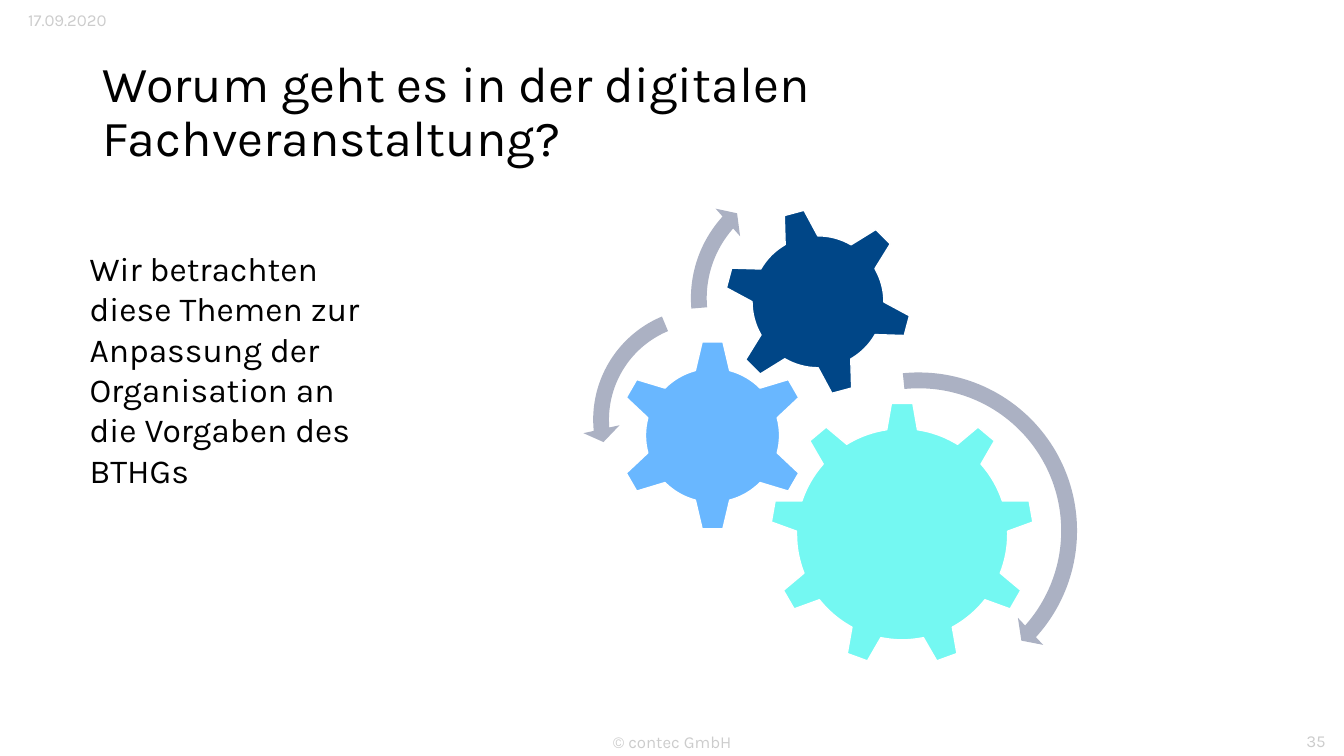
from dataclasses import dataclass

from pptx import Presentation
from pptx.dml.color import RGBColor
from pptx.enum.shapes import MSO_SHAPE as Shape
from pptx.enum.text import MSO_ANCHOR as Anchor, MSO_AUTO_SIZE as AutoSize, PP_ALIGN as Align
from pptx.util import Pt


@dataclass(frozen=True)
class Theme:
    font: str = "Karla"
    title_size: int = 36
    body_size: int = 24
    footer_size: int = 12
    ink: str = "000000"
    muted: str = "CCCCCC"
    outline: str = "FFFFFF"
    turquoise: str = "74F8F2"
    sky: str = "69B7FF"
    navy: str = "004687"
    arrow: str = "ABB1C3"


class SlideBuilder:
    def __init__(self, slide, theme):
        self.slide = slide
        self.theme = theme
        self.wheelwork = slide.shapes.add_group_shape()

    def set_text(self, frame, text, size, color, align, anchor):
        frame.word_wrap = True
        frame.vertical_anchor = anchor
        paragraph = frame.paragraphs[0]
        paragraph.text = text
        paragraph.alignment = align
        paragraph.font.name = self.theme.font
        paragraph.font.size = Pt(size)
        paragraph.font.color.rgb = RGBColor.from_string(color)
        return paragraph

    def title(self, text, left, top, width, height):
        heading = self.slide.shapes.title
        heading.left, heading.top = Pt(left), Pt(top)
        heading.width, heading.height = Pt(width), Pt(height)
        heading.text_frame.auto_size = AutoSize.NONE
        paragraph = self.set_text(heading.text_frame, text, self.theme.title_size,
                                  self.theme.ink, Align.LEFT, Anchor.MIDDLE)
        paragraph.line_spacing = 0.9

    def text(self, text, box, size, color, align=Align.LEFT, anchor=Anchor.TOP):
        frame = self.slide.shapes.add_textbox(*map(Pt, box)).text_frame
        self.set_text(frame, text, size, color, align, anchor)

    def round_shape(self, kind, left, top, diameter, color):
        """Add a filled preset with a square frame to the wheelwork group."""
        shape = self.wheelwork.shapes.add_shape(
            kind, Pt(left), Pt(top), Pt(diameter), Pt(diameter))
        shape.shadow.inherit = False
        shape.fill.solid()
        shape.fill.fore_color.rgb = RGBColor.from_string(color)
        return shape

    def gear(self, kind, left, top, diameter, color, rotation=0):
        gear = self.round_shape(kind, left, top, diameter, color)
        gear.rotation = rotation
        gear.line.color.rgb = RGBColor.from_string(self.theme.outline)
        gear.line.width = Pt(1)

    def turn_arrow(self, kind, left, top, diameter, band, angles, head):
        """Add a curved arrow; band and head in percent, angles in degrees."""
        arrow = self.round_shape(kind, left, top, diameter, self.theme.arrow)
        arrow.line.fill.background()
        values = [band / 100, *(angle * 0.6 for angle in angles), head / 100]
        for index, value in enumerate(values):
            arrow.adjustments[index] = value


def main():
    deck = Presentation()
    deck.slide_width, deck.slide_height = Pt(960), Pt(540)
    theme = Theme()
    title_only = deck.slide_layouts[5]
    page = SlideBuilder(deck.slides.add_slide(title_only), theme)

    page.title("Worum geht es in der digitalen Fachveranstaltung?", 66.2, 28.8, 828, 104.4)

    page.gear(Shape.GEAR_9, 550.1, 287.3, 188.6, theme.turquoise)
    page.gear(Shape.GEAR_6, 440.6, 242.6, 136.8, theme.sky)
    page.gear(Shape.GEAR_6, 517, 148.3, 134.6, theme.navy, rotation=345)

    page.turn_arrow(Shape.CIRCULAR_ARROW, 535.7, 258.5, 241.2,
                    4.69, (4.98, 42, 264.22), 5.47)
    page.turn_arrow(Shape.LEFT_CIRCULAR_ARROW, 416.2, 212.4, 175,
                    6.45, (7.17, 174.82, 247.3), 7.53)
    page.turn_arrow(Shape.CIRCULAR_ARROW, 486, 118.8, 188.6,
                    5.98, (6.57, 221.9, 175.14), 6.98)

    page.text("Wir betrachten diese Themen zur Anpassung der Organisation an "
              "die Vorgaben des BTHGs",
              (56.9, 173.5, 223.9, 181.4), theme.body_size, theme.ink)

    for text, box, align, anchor in (
        ("17.09.2020", (13, 3.6, 106.6, 21.6), Align.LEFT, Anchor.TOP),
        ("© contec GmbH", (318.2, 515.5, 324, 28.8), Align.CENTER, Anchor.MIDDLE),
        ("35", (912.2, 514.8, 41.8, 28.8), Align.RIGHT, Anchor.MIDDLE),
    ):
        page.text(text, box, theme.footer_size, theme.muted, align, anchor)

    deck.save("out.pptx")


if __name__ == "__main__":
    main()
